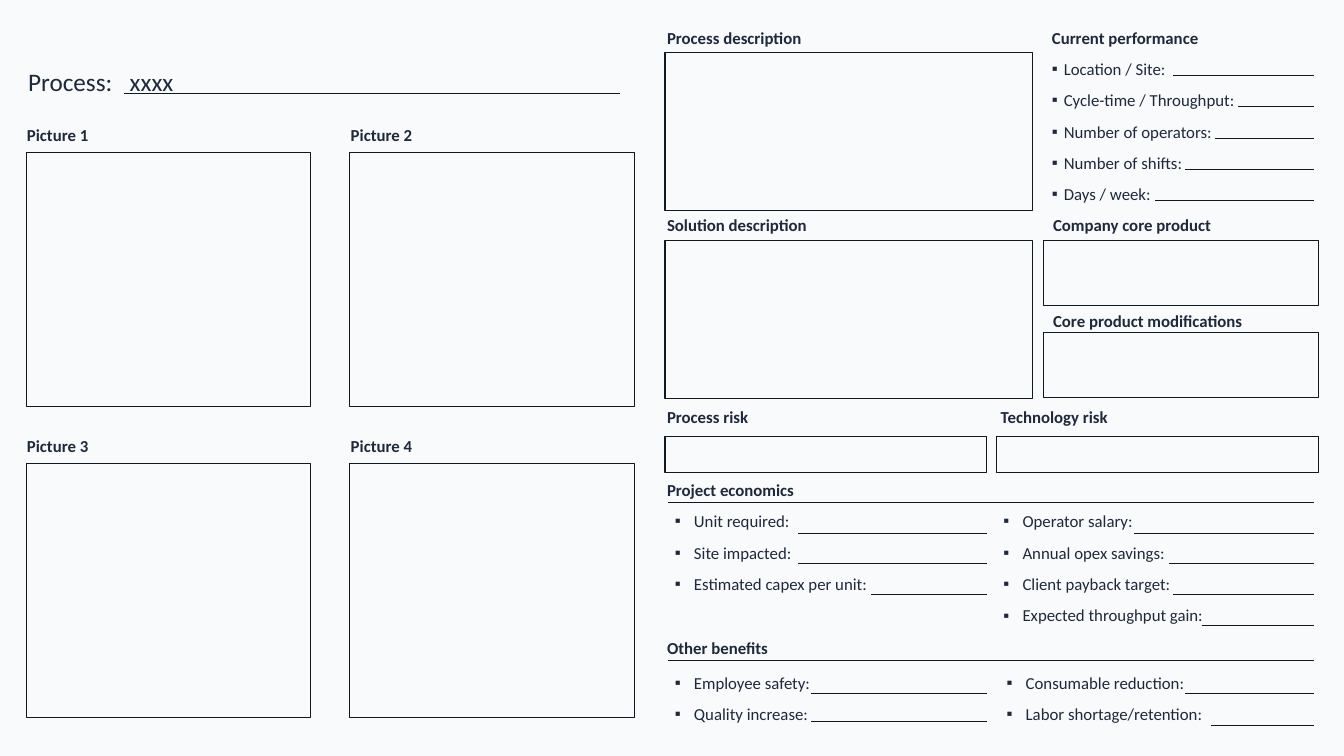
from dataclasses import dataclass

from lxml.etree import SubElement
from pptx import Presentation
from pptx.dml.color import RGBColor
from pptx.enum.shapes import MSO_CONNECTOR, MSO_SHAPE
from pptx.oxml.ns import qn
from pptx.util import Cm, Pt


@dataclass(frozen=True)
class Theme:
    background: RGBColor = RGBColor(0xF8, 0xFA, 0xFC)
    text: RGBColor = RGBColor(0x1E, 0x29, 0x3B)
    line: RGBColor = RGBColor(0x0F, 0x19, 0x22)
    font: str = "Calibri"
    title_size: int = 18
    body_size: int = 12
    line_width: float = 0.75


THEME = Theme()

# All lengths are in centimetres.
LEFT, RIGHT = 16.84, 33.12
MIDDLE = 24.87
INSETS = (0.25, 0.13)
CAPTION_WIDTH = 5.38

# caption, caption left and top, box (left, top, width, height)
PANELS = [
    ("Process description", 16.56, 0.56, (16.76, 1.32, 9.27, 3.99)),
    ("Solution description", 16.56, 5.28, (16.76, 6.05, 9.27, 3.99)),
    ("Company core product", 26.29, 5.28, (26.29, 6.05, 6.93, 1.65)),
    ("Core product modifications", 26.29, 7.7, (26.29, 8.38, 6.93, 1.65)),
    ("Process risk", 16.56, 10.13, (16.76, 11, 8.1, 0.91)),
    ("Technology risk", 24.97, 10.13, (25.12, 11, 8.1, 0.91)),
]
PANEL_CAPTION_HEIGHT = 2.31

PICTURES = ["Picture 1", "Picture 2", "Picture 3", "Picture 4"]
PICTURE_COLUMNS = 2
PICTURE_PITCH = (8.16, 7.84)
PICTURE_CAPTION = (0.43, 3.02)
PICTURE_CAPTION_HEIGHT = 2.62
PICTURE_BOX = (0.66, 3.84, 7.16, 6.4)

# caption, caption top, rule height
SECTIONS = [("Project economics", 11.96, 12.67), ("Other benefits", 15.93, 16.64)]
SECTION_CAPTION_HEIGHT = 1.8

# Each field is a label and the left end of its answer line.
FIELD_LISTS = [
    dict(heading="Current performance", box=(26.26, 0.56, 7.21, 4.75), indent=0.3,
         first_line=1.9, pitch=0.79, line_end=RIGHT,
         fields=[("Location / Site:", 29.57), ("Cycle-time / Throughput:", 31.19),
                 ("Number of operators:", 30.61), ("Number of shifts:", 29.87),
                 ("Days / week:", 29.11)]),
    dict(heading=None, box=(16.76, 12.75, 8.1, 2.36), indent=0.48,
         first_line=13.44, pitch=0.77, line_end=MIDDLE,
         fields=[("Unit required:", 20.12), ("Site impacted:", 20.12),
                 ("Estimated capex per unit:", 21.95)]),
    dict(heading=None, box=(25.04, 12.75, 8.1, 3.96), indent=0.48,
         first_line=13.44, pitch=0.77, line_end=RIGHT,
         fields=[("Operator salary:", 28.58), ("Annual opex savings:", 29.46),
                 ("Client payback target:", 29.57), ("Expected throughput gain:", 30.28)]),
    dict(heading=None, box=(16.76, 16.81, 8.1, 1.57), indent=0.48,
         first_line=17.48, pitch=0.71, line_end=MIDDLE,
         fields=[("Employee safety:", 20.45), ("Quality increase:", 20.45)]),
    dict(heading=None, box=(25.12, 16.81, 8.1, 1.57), indent=0.48,
         first_line=17.48, pitch=0.81, line_end=RIGHT,
         fields=[("Consumable reduction:", 29.87), ("Labor shortage/retention:", 30.53)]),
]

TITLE = "Process:\txxxx"
TITLE_BOX = (0.71, 1.75, 15.49, 0.99)
TITLE_TAB = 2.56
TITLE_LINE = (3.12, 15.62, 2.36)


def add_bullet(paragraph, indent):
    properties = paragraph._p.get_or_add_pPr()
    properties.set("marL", str(Cm(indent)))
    properties.set("indent", str(-Cm(indent)))
    color = SubElement(properties, qn("a:buClr"))
    SubElement(color, qn("a:srgbClr")).set("val", str(THEME.text))
    SubElement(properties, qn("a:buFont")).set("typeface", "Arial")
    SubElement(properties, qn("a:buChar")).set("char", "▪")


def add_tab_stop(paragraph, position):
    tabs = SubElement(paragraph._p.get_or_add_pPr(), qn("a:tabLst"))
    tab = SubElement(tabs, qn("a:tab"))
    tab.set("pos", str(Cm(position)))
    tab.set("algn", "l")


def write(paragraph, text, *, size=THEME.body_size, bold=False, indent=None,
          tab=None, space_before=None, line_spacing=None):
    if indent:
        add_bullet(paragraph, indent)
    if tab:
        add_tab_stop(paragraph, tab)
    paragraph.text = text
    if space_before:
        paragraph.space_before = Pt(space_before)
    if line_spacing:
        paragraph.line_spacing = line_spacing
    font = paragraph.font
    font.size, font.bold, font.name = Pt(size), bold, THEME.font
    font.color.rgb = THEME.text


def add_text_frame(slide, box, insets=INSETS):
    frame = slide.shapes.add_textbox(*map(Cm, box)).text_frame
    frame.word_wrap = True
    frame.margin_left = frame.margin_right = Cm(insets[0])
    frame.margin_top = frame.margin_bottom = Cm(insets[1])
    return frame


def add_caption(slide, text, left, top, height):
    frame = add_text_frame(slide, (left, top, CAPTION_WIDTH, height))
    write(frame.paragraphs[0], text, bold=True)


def add_box(slide, box):
    shape = slide.shapes.add_shape(MSO_SHAPE.RECTANGLE, *map(Cm, box))
    shape.shadow.inherit = False
    shape.fill.solid()
    shape.fill.fore_color.rgb = THEME.background
    shape.line.color.rgb = THEME.line
    shape.line.width = Pt(THEME.line_width)


def add_rule(slide, start, end, top):
    """Draw a horizontal line."""
    connector = slide.shapes.add_connector(
        MSO_CONNECTOR.STRAIGHT, Cm(start), Cm(top), Cm(end), Cm(top))
    connector.line.color.rgb = THEME.line
    connector.line.width = Pt(THEME.line_width)
    SubElement(connector._element.spPr, qn("a:effectLst"))


def add_field_list(slide, heading, box, indent, first_line, pitch, line_end, fields):
    """Write bulleted labels, each with an answer line beside it."""
    frame = add_text_frame(slide, box)
    if heading:
        write(frame.paragraphs[0], heading, bold=True)
    for row, (label, line_start) in enumerate(fields):
        is_first = row == 0 and not heading
        paragraph = frame.paragraphs[0] if is_first else frame.add_paragraph()
        write(paragraph, label, indent=indent, space_before=None if is_first else 8)
        add_rule(slide, line_start, line_end, first_line + row * pitch)


def main():
    presentation = Presentation()
    presentation.slide_width, presentation.slide_height = Cm(33.87), Cm(19.05)
    slide = presentation.slides.add_slide(presentation.slide_layouts[6])
    slide.background.fill.solid()
    slide.background.fill.fore_color.rgb = THEME.background

    for caption, left, top, box in PANELS:
        add_caption(slide, caption, left, top, PANEL_CAPTION_HEIGHT)
        add_box(slide, box)

    for caption, top, rule_top in SECTIONS:
        add_caption(slide, caption, 16.56, top, SECTION_CAPTION_HEIGHT)
        add_rule(slide, LEFT, RIGHT, rule_top)

    for field_list in FIELD_LISTS:
        add_field_list(slide, **field_list)

    for index, caption in enumerate(PICTURES):
        row, column = divmod(index, PICTURE_COLUMNS)
        across, down = column * PICTURE_PITCH[0], row * PICTURE_PITCH[1]
        add_caption(slide, caption, PICTURE_CAPTION[0] + across,
                    PICTURE_CAPTION[1] + down, PICTURE_CAPTION_HEIGHT)
        left, top, width, height = PICTURE_BOX
        add_box(slide, (left + across, top + down, width, height))

    title = add_text_frame(slide, TITLE_BOX, insets=(0, 0))
    write(title.paragraphs[0], TITLE, size=THEME.title_size, tab=TITLE_TAB, line_spacing=0.9)
    add_rule(slide, *TITLE_LINE)

    presentation.save("out.pptx")


if __name__ == "__main__":
    main()
